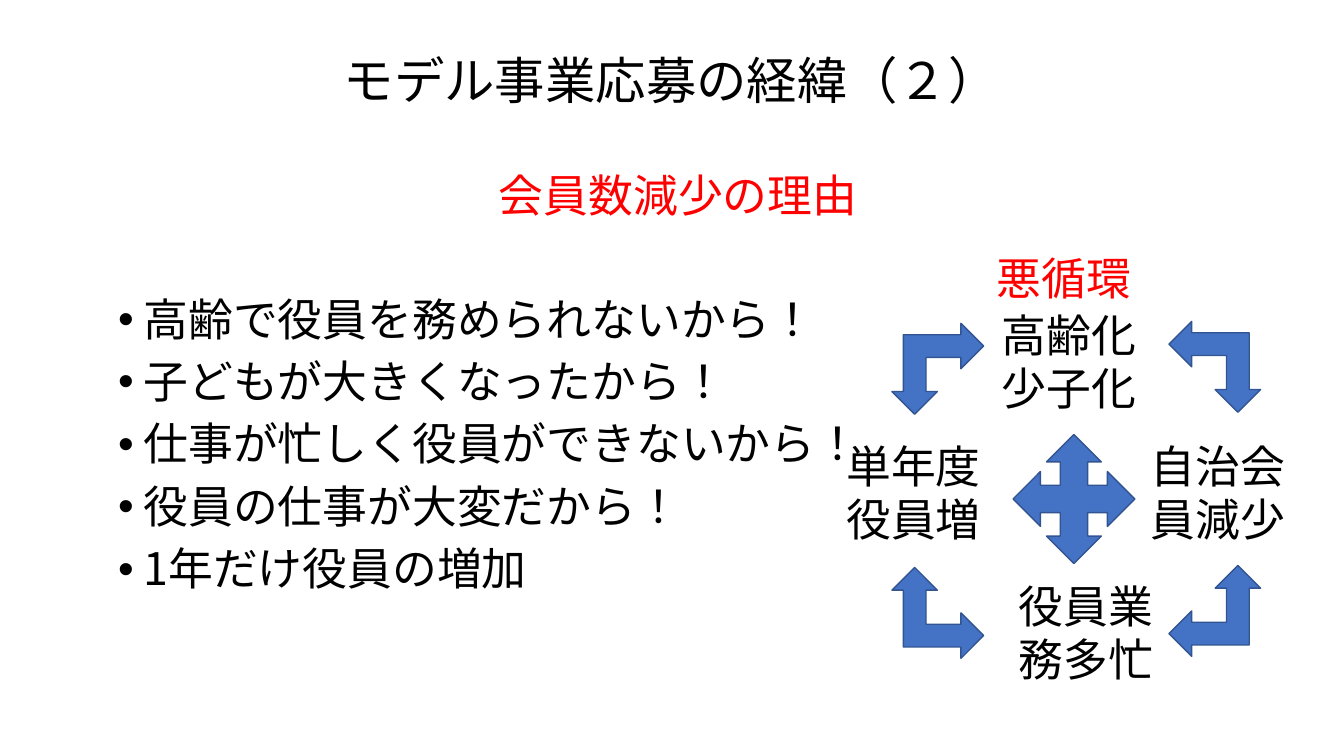
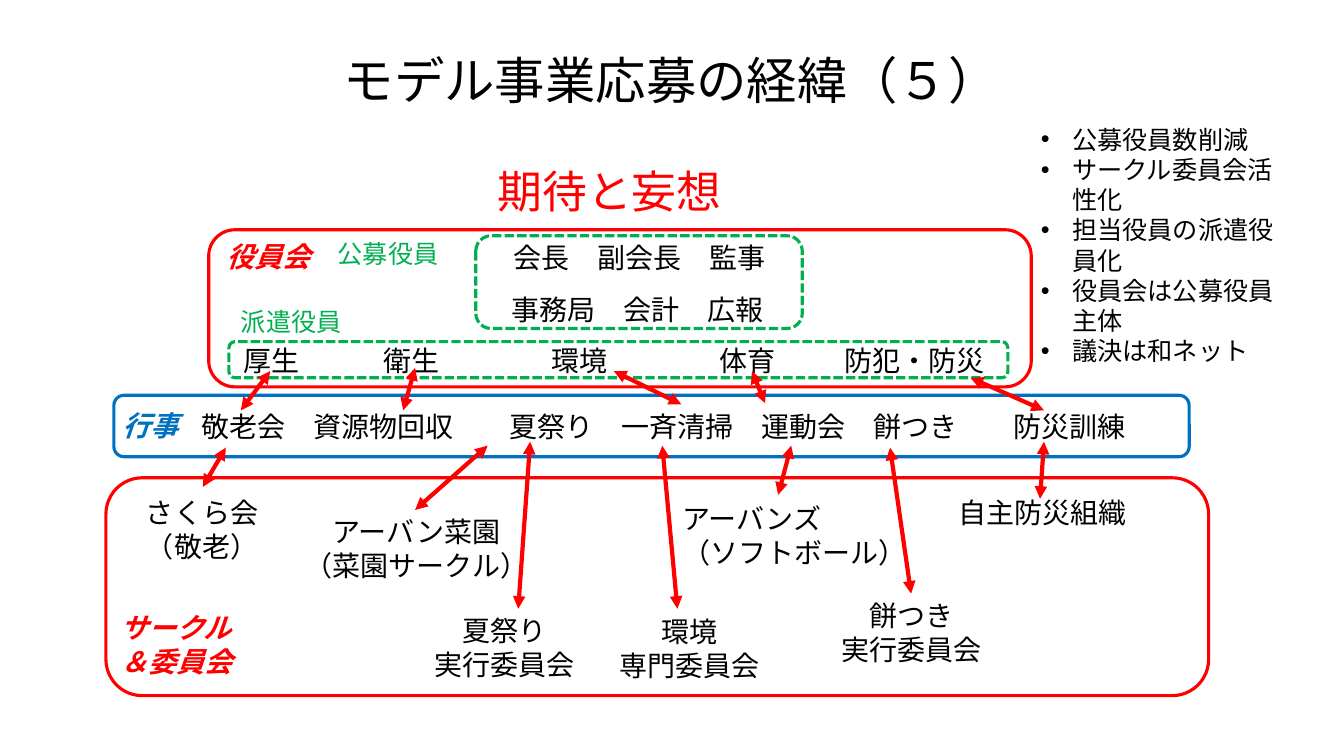
"""Build two slides on why a residents' association applied for a model project."""
from dataclasses import dataclass
from typing import Optional

from lxml.etree import SubElement
from pptx import Presentation
from pptx.dml.color import RGBColor
from pptx.enum.dml import MSO_LINE
from pptx.enum.lang import MSO_LANGUAGE_ID as Language
from pptx.enum.shapes import MSO_CONNECTOR, MSO_SHAPE as Preset
from pptx.enum.text import MSO_ANCHOR, MSO_AUTO_SIZE, PP_ALIGN as Align
from pptx.oxml.ns import qn
from pptx.util import Cm, Pt

FONT = "Noto Sans CJK JP"
BLACK, RED, GREEN, BLUE = "000000", "FF0000", "00B050", "0070C0"
ARROW_FILL, ARROW_EDGE = "4472C4", "325491"
CM_PER_POINT = 2.54 / 72
ROW_HEIGHT, ROW_PADDING = 1.12, 0.6


@dataclass(frozen=True)
class Style:
    """Look of a paragraph; indent in cm turns the bullet on."""
    size: int = 20
    color: str = BLACK
    strong: bool = False
    align: Align = Align.LEFT
    indent: float = 0
    spacing: Optional[float] = None
    before: float = 0


@dataclass(frozen=True)
class Label:
    """Text box: place in cm, lines and style."""
    left: float
    top: float
    width: float
    height: float
    lines: tuple[str, ...]
    style: Style = Style()


@dataclass(frozen=True)
class Row:
    """Words on one line: place in cm, and each word's column in characters."""
    left: float
    top: float
    words: tuple[tuple[float, str], ...]


@dataclass(frozen=True)
class Frame:
    """Rounded outline: place in cm, colour and dash."""
    left: float
    top: float
    width: float
    height: float
    color: str
    dashed: bool = False


@dataclass(frozen=True)
class Link:
    """Double-headed arrow between two points in cm."""
    x1: float
    y1: float
    x2: float
    y2: float


TITLE = Style(36, align=Align.CENTER, spacing=0.9)
HEADING = Style(32, RED, align=Align.CENTER, spacing=0.9, before=10)
REASON = Style(32, indent=0.64, spacing=0.9, before=10)
FIRST_REASON = Style(32, indent=0.64, spacing=0.9, before=54)
CYCLE = Style(32)
WORD = Style()
CENTERED = Style(align=Align.CENTER)
GROUP = Style(color=RED, strong=True)
KIND = Style(18, GREEN)

REASONS = ("高齢で役員を務められないから！", "子どもが大きくなったから！",
           "仕事が忙しく役員ができないから！", "役員の仕事が大変だから！", "1年だけ役員の増加")

CYCLE_LABELS = (
    Label(25, 7.62, 4.34, 3, ("高齢化少子化",), CYCLE),
    Label(28.75, 10.92, 4.34, 3, ("自治会", "員減少"), CYCLE),
    Label(24.87, 6.2, 4.09, 1.63, ("悪循環",), Style(32, RED)),
    Label(21.08, 10.92, 4.34, 3, ("単年度役員増",), CYCLE),
    Label(25.43, 14.45, 4.34, 3, ("役員業務多忙",), CYCLE),
)

FRAMES = (
    Frame(11.99, 5.94, 8.23, 2.34, GREEN, True),
    Frame(5.26, 5.79, 20.73, 3.96, RED),
    Frame(2.87, 9.96, 27.1, 1.55, BLUE),
    Frame(2.67, 12.04, 27.79, 5.49, RED),
    Frame(5.77, 8.61, 19.63, 0.91, GREEN, True),
)

ROWS = (
    Row(12.7, 5.94, ((0, "会長"), (3, "副会長"), (7, "監事"))),
    Row(12.65, 7.24, ((0, "事務局"), (4, "会計"), (7, "広報"))),
    Row(5.89, 8.53, ((0, "厚生"), (5, "衛生"), (11, "環境"), (17, "体育"),
                     (21.45, "防犯・防災"))),
    Row(4.83, 10.19, ((0, "敬老会"), (4, "資源物回収"), (11, "夏祭り"), (15, "一斉清掃"),
                      (20, "運動会"), (24, "餅つき"), (29, "防災訓練"))),
)

GROUP_LABELS = (
    Label(3.43, 12.37, 3.4, 1.96, ("さくら会", "（敬老）")),
    Label(7.37, 12.85, 6.25, 1.96, ("アーバン菜園", "（菜園サークル）"), CENTERED),
    Label(16.94, 12.52, 6.25, 1.96, ("アーバンズ", "（ソフトボール）")),
    Label(15.34, 15.37, 4.08, 1.96, ("環境", "専門委員会"), CENTERED),
    Label(23.9, 12.37, 4.8, 1.96, ("自主防災組織",)),
    Label(20.93, 14.96, 4.08, 1.96, ("餅つき", "実行委員会"), CENTERED),
    Label(10.67, 15.34, 4.08, 1.96, ("夏祭り", "実行委員会"), CENTERED),
    Label(5.46, 5.92, 2.7, 1.12, ("役員会",), GROUP),
    Label(8.26, 5.89, 3.1, 1.02, ("公募役員",), KIND),
    Label(5.82, 7.59, 3.1, 1.02, ("派遣役員",), KIND),
    Label(2.84, 10.16, 1.95, 1.12, ("行事",), Style(color=BLUE, strong=True)),
    Label(2.79, 15.27, 3.66, 1.96, ("サークル＆委員会",), GROUP),
    Label(25.98, 3, 6.88, 6.4,
          ("公募役員数削減", "サークル委員会活性化", "担当役員の派遣役員化",
           "役員会は公募役員主体", "議決は和ネット"), Style(18, indent=0.79)),
)

LINKS = (
    Link(6.81, 9.35, 6.07, 10.34), Link(5.69, 11.28, 5.11, 12.27),
    Link(10.46, 9.27, 10.16, 10.34), Link(12.29, 11.23, 10.46, 12.85),
    Link(16.69, 11.23, 17.07, 15.34), Link(13.36, 11.13, 13.06, 15.34),
    Link(19.94, 11.23, 19.61, 12.47), Link(18.95, 9.35, 19.28, 10.16),
    Link(22.43, 11.28, 22.96, 14.96), Link(24.46, 9.52, 26.31, 10.34),
    Link(26.31, 11.13, 26.21, 12.57), Link(15.47, 9.35, 17.17, 10.19),
)


def rgb(color: str) -> RGBColor:
    """Turn a hex string into a colour."""
    return RGBColor.from_string(color)


def place(shape, left: float, top: float, width: float, height: float) -> None:
    """Move and size a shape, in cm."""
    shape.left, shape.top = Cm(left), Cm(top)
    shape.width, shape.height = Cm(width), Cm(height)


def write_para(para, text: str, style: Style) -> None:
    """Write one paragraph with its bullet and font."""
    para.text = text
    props = para._p.get_or_add_pPr()
    props.set("marL", str(Cm(style.indent)))
    props.set("indent", str(-Cm(style.indent)))
    if style.indent:
        SubElement(props, qn("a:buFont"), typeface="Arial")
        SubElement(props, qn("a:buChar"), char="•")
    else:
        SubElement(props, qn("a:buNone"))
    para.alignment = style.align
    para.space_before = Pt(style.before)
    if style.spacing:
        para.line_spacing = style.spacing
    font = para.font
    font.size, font.name = Pt(style.size), FONT
    font.bold = font.italic = style.strong
    font.color.rgb = rgb(style.color)
    SubElement(props.find(qn("a:defRPr")), qn("a:ea"), typeface=FONT)
    for span in para.runs:
        span.font.language_id = Language.JAPANESE


def write_lines(shape, lines: list[tuple[str, Style]]) -> None:
    """Fill a shape's text frame with styled paragraphs."""
    frame = shape.text_frame
    frame.word_wrap, frame.auto_size = True, MSO_AUTO_SIZE.NONE
    for index, (text, style) in enumerate(lines):
        para = frame.add_paragraph() if index else frame.paragraphs[0]
        write_para(para, text, style)


def add_page(deck, title: str):
    """Add a page with the shared title style."""
    page = deck.slides.add_slide(deck.slide_layouts[1])
    place(page.shapes.title, 5.97, 1.02, 21.89, 2.16)
    write_lines(page.shapes.title, [(title, TITLE)])
    page.shapes.title.text_frame.vertical_anchor = MSO_ANCHOR.MIDDLE
    return page


def add_label(page, label: Label) -> None:
    """Add a text box."""
    box = page.shapes.add_textbox(
        Cm(label.left), Cm(label.top), Cm(label.width), Cm(label.height))
    write_lines(box, [(line, label.style) for line in label.lines])


def add_row(page, row: Row) -> None:
    """Add one text box per word, each at its character column."""
    em = WORD.size * CM_PER_POINT
    for column, word in row.words:
        add_label(page, Label(row.left + column * em, row.top,
                              len(word) * em + ROW_PADDING, ROW_HEIGHT, (word,), WORD))


def add_frame(page, frame: Frame) -> None:
    """Add an unfilled rounded outline."""
    box = page.shapes.add_shape(
        Preset.ROUNDED_RECTANGLE, Cm(frame.left), Cm(frame.top),
        Cm(frame.width), Cm(frame.height))
    box.shadow.inherit = False
    box.fill.background()
    box.line.color.rgb, box.line.width = rgb(frame.color), Pt(2.25)
    if frame.dashed:
        box.line.dash_style = MSO_LINE.SQUARE_DOT


def add_link(page, link: Link) -> None:
    """Add a red arrow with a head at both ends."""
    line = page.shapes.add_connector(
        MSO_CONNECTOR.STRAIGHT, Cm(link.x1), Cm(link.y1), Cm(link.x2), Cm(link.y2))
    line.line.color.rgb, line.line.width = rgb(RED), Pt(3)
    outline = line._element.spPr.find(qn("a:ln"))
    for end in ("a:headEnd", "a:tailEnd"):
        SubElement(outline, qn(end), type="triangle")
    SubElement(line._element.spPr, qn("a:effectLst"))


def add_block_arrow(page, preset: Preset, left: float, top: float, width: float,
                    height: float, flips: tuple[str, ...] = ()) -> None:
    """Add a blue block arrow, mirrored as asked."""
    arrow = page.shapes.add_shape(preset, Cm(left), Cm(top), Cm(width), Cm(height))
    arrow.shadow.inherit = False
    arrow.fill.solid()
    arrow.fill.fore_color.rgb = rgb(ARROW_FILL)
    arrow.line.color.rgb, arrow.line.width = rgb(ARROW_EDGE), Pt(1)
    for flip in flips:
        arrow._element.spPr.get_or_add_xfrm().set(flip, "1")


def build_reasons(deck) -> None:
    """Build the page on falling membership and its vicious circle."""
    page = add_page(deck, "モデル事業応募の経緯（２）")
    body = page.placeholders[1]
    place(body, 2.72, 4.24, 28.75, 13)
    write_lines(body, [("会員数減少の理由", HEADING), (REASONS[0], FIRST_REASON),
                       *((reason, REASON) for reason in REASONS[1:])])
    for label in CYCLE_LABELS:
        add_label(page, label)
    add_block_arrow(page, Preset.QUAD_ARROW, 25.53, 10.95, 3.07, 3.25)
    for left, drop, across in ((29.46, 0, ()), (22.48, 0.05, ("flipH",))):
        for top, down in ((14.25, ()), (8.1, ("flipV",))):
            add_block_arrow(page, Preset.LEFT_UP_ARROW, left, top + drop,
                            2.31, 2.29, across + down)


def build_hopes(deck) -> None:
    """Build the page on the hoped-for organisation."""
    page = add_page(deck, "モデル事業応募の経緯（５）")
    body = page.placeholders[1]
    place(body, 0.99, 4.14, 28.75, 1.78)
    write_lines(body, [("期待と妄想", HEADING)])
    for frame in FRAMES:
        add_frame(page, frame)
    for row in ROWS:
        add_row(page, row)
    for label in GROUP_LABELS:
        add_label(page, label)
    for link in LINKS:
        add_link(page, link)


def main() -> None:
    """Build and save the deck."""
    deck = Presentation()
    deck.slide_width, deck.slide_height = Cm(33.87), Cm(19.05)
    build_reasons(deck)
    build_hopes(deck)
    deck.save("out.pptx")


if __name__ == "__main__":
    main()
